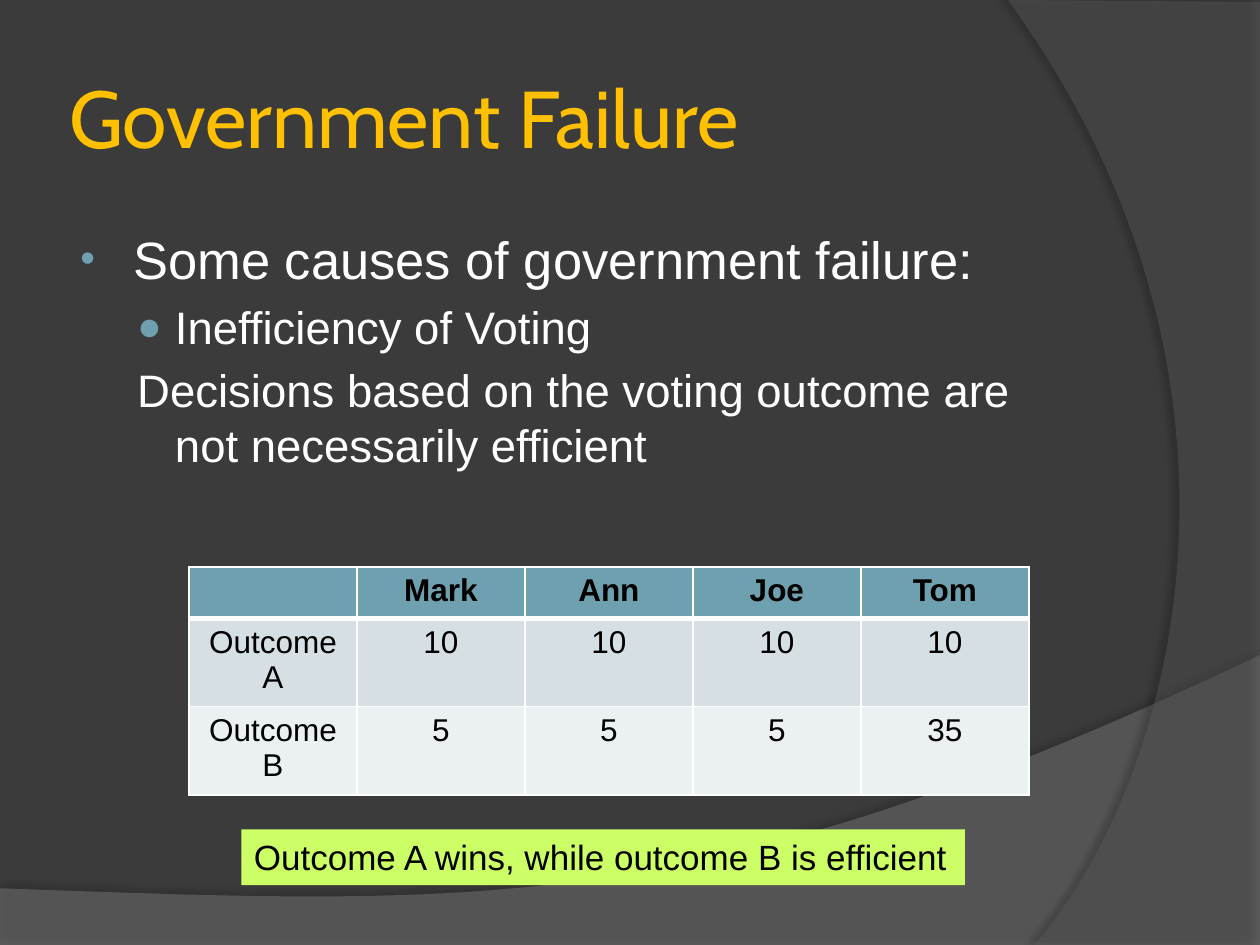
from dataclasses import dataclass

from lxml.etree import SubElement
from pptx import Presentation
from pptx.dml.color import RGBColor
from pptx.enum.shapes import MSO_SHAPE
from pptx.enum.text import MSO_ANCHOR, MSO_AUTO_SIZE, PP_ALIGN
from pptx.oxml.ns import qn
from pptx.util import Inches, Pt


@dataclass(frozen=True)
class Theme:
    """Colours, fonts and type sizes of the deck."""
    ground: str = "3B3B3B"
    wave: str = "7F7F7F"
    arc: str = "5E5E5E"
    shade: str = "000000"
    gold: str = "FFC000"
    light: str = "FFFFFF"
    dark: str = "000000"
    teal: str = "6EA0B0"
    bands: tuple = ("6EA0B0", "D5DFE4", "EBF0F2")
    lime: str = "CCFF66"
    heading_font: str = "Cabin"
    body_font: str = "Arial"
    title_size: int = 46
    lead_size: int = 30
    point_size: int = 26
    note_size: int = 20
    cell_size: int = 18


@dataclass(frozen=True)
class Box:
    """A region in grid units, twelve columns or rows to the inch."""
    left: float
    top: float
    width: float
    height: float

    def emu(self):
        """Return the region as slide lengths."""
        return [grid(n) for n in (self.left, self.top, self.width, self.height)]


THEME = Theme()
PAGE = Box(0, 0, 120, 90)


def grid(units):
    """Turn grid units into a slide length."""
    return Inches(units / 12)


def paint(fill, color):
    """Give a fill one solid colour."""
    fill.solid()
    fill.fore_color.rgb = RGBColor.from_string(color)


def add_node(parent, tag, **attributes):
    """Append a drawing element with the given attributes."""
    return SubElement(parent, qn(tag), {k: str(v) for k, v in attributes.items()})


def write(para, text, *, size, color, font=THEME.body_font, bold=False, align=PP_ALIGN.LEFT):
    """Put formatted text in a paragraph."""
    para.alignment = align
    span = para.add_run()
    span.text = text
    span.font.name = font
    span.font.size = Pt(size)
    span.font.bold = bold
    span.font.color.rgb = RGBColor.from_string(color)


def list_style(para, size, margin, indent, bullet=None, scale=100):
    """Set the hanging indent, spacing and bullet of a list paragraph."""
    para.space_before = Pt(size * 0.2)
    props = para._p.get_or_add_pPr()
    props.set("marL", str(Inches(margin)))
    props.set("indent", str(Inches(indent)))
    if bullet is None:
        add_node(props, "a:buNone")
        return
    add_node(add_node(props, "a:buClr"), "a:srgbClr", val=THEME.teal)
    add_node(props, "a:buSzPct", val=scale * 1000)
    add_node(props, "a:buFont", typeface=THEME.body_font)
    add_node(props, "a:buChar", char=bullet)


def bezier(start, first, second, end, steps=48):
    """Return points along a cubic curve, without its start."""
    points = []
    for step in range(1, steps + 1):
        t = step / steps
        weights = ((1 - t) ** 3, 3 * t * (1 - t) ** 2, 3 * t * t * (1 - t), t ** 3)
        points.append(tuple(
            sum(w * p[axis] for w, p in zip(weights, (start, first, second, end)))
            for axis in (0, 1)))
    return points


def add_sweep(page, box, corners, curve, color, opacity, shadow):
    """Draw a translucent outline with one curved side and a soft shadow."""
    points = [(grid(box.left + x), grid(box.top + y))
              for x, y in corners + bezier(corners[-1], *curve)]
    builder = page.shapes.build_freeform(*points[0])
    builder.add_line_segments(points[1:], close=True)
    shape = builder.convert_to_shape()
    paint(shape.fill, color)
    shape.line.fill.background()
    tone = shape._element.spPr.find(qn("a:solidFill"))[0]
    add_node(tone, "a:alpha", val=opacity * 1000)
    density, blur, distance, angle = shadow
    effects = add_node(shape._element.spPr, "a:effectLst")
    outer = add_node(effects, "a:outerShdw", blurRad=Pt(blur), dist=Pt(distance),
                     dir=angle * 60000, algn="ctr", rotWithShape=0)
    shade = add_node(outer, "a:srgbClr", val=THEME.shade)
    add_node(shade, "a:alpha", val=density * 1000)


def add_backdrop(page, box):
    """Colour the page and add its two sweeping bands."""
    paint(page.background.fill, THEME.ground)
    add_sweep(page, box, [(0, 84.6), (0, 90), (120, 90), (120, 62.4)],
              [(67.1, 87.5), (46.9, 86.3), (0, 84.6)],
              THEME.wave, 45, (35, 4, 3.5, 270))
    add_sweep(page, box, [(120, 0.2), (120, 90), (98.5, 90)],
              [(112.2, 74.3), (122.2, 36), (96, 0)],
              THEME.arc, 40, (45, 4, 4, 180))


def add_title(page, box, text):
    """Place the page heading."""
    frame = page.shapes.add_textbox(*box.emu()).text_frame
    frame.word_wrap = True
    frame.vertical_anchor = MSO_ANCHOR.MIDDLE
    frame.margin_left = frame.margin_right = Inches(0.05)
    write(frame.paragraphs[0], text, size=THEME.title_size,
          color=THEME.gold, font=THEME.heading_font)


def add_points(page, box, lead, point, detail):
    """Place the lead line, its bulleted point and the detail below."""
    frame = page.shapes.add_textbox(*box.emu()).text_frame
    frame.word_wrap = True
    lines = [(lead, THEME.lead_size, 0.46, -0.42, "•", 80),
             (point, THEME.point_size, 0.79, -0.3, "●", 90),
             (detail, THEME.point_size, 0.79, -0.3)]
    for index, (text, size, *style) in enumerate(lines):
        para = frame.add_paragraph() if index else frame.paragraphs[0]
        write(para, text, size=size, color=THEME.light)
        para.level = min(index, 1)
        list_style(para, size, *style)


def add_borders(cell, bottom):
    """Draw the light rules around a cell."""
    props = cell._tc.get_or_add_tcPr()
    widths = {"a:lnL": 1, "a:lnR": 1, "a:lnT": 1, "a:lnB": bottom}
    for index, (tag, width) in enumerate(widths.items()):
        rule = add_node(props, tag, w=Pt(width))
        add_node(add_node(rule, "a:solidFill"), "a:srgbClr", val=THEME.light)
        props.insert(index, rule)


def add_votes(page, box, rows, heights):
    """Place the table of each voter's gain from each outcome."""
    table = page.shapes.add_table(len(rows), len(rows[0]), *box.emu()).table
    for r, (values, height) in enumerate(zip(rows, heights)):
        table.rows[r].height = grid(height)
        for c, value in enumerate(values):
            cell = table.cell(r, c)
            paint(cell.fill, THEME.bands[r])
            add_borders(cell, bottom=1 if r else 3)
            if value:
                write(cell.text_frame.paragraphs[0], value, size=THEME.cell_size,
                      color=THEME.dark, bold=r == 0, align=PP_ALIGN.CENTER)


def add_verdict(page, box, text):
    """Place the highlighted conclusion."""
    shape = page.shapes.add_shape(MSO_SHAPE.RECTANGLE, *box.emu())
    shape.shadow.inherit = False
    paint(shape.fill, THEME.lime)
    shape.line.fill.background()
    frame = shape.text_frame
    frame.word_wrap = False
    frame.auto_size = MSO_AUTO_SIZE.SHAPE_TO_FIT_TEXT
    frame.vertical_anchor = MSO_ANCHOR.TOP
    write(frame.paragraphs[0], text, size=THEME.note_size, color=THEME.dark)


def main():
    """Build and save the deck."""
    deck = Presentation()
    deck.slide_width, deck.slide_height = grid(PAGE.width), grid(PAGE.height)
    page = deck.slides.add_slide(deck.slide_layouts[6])
    add_backdrop(page, PAGE)
    add_title(page, Box(6, 3.6, 98, 15), "Government Failure")
    add_points(page, Box(6, 21, 98, 59.4), "Some causes of government failure:",
               "Inefficiency of Voting",
               "Decisions based on the voting outcome are not necessarily efficient")
    add_votes(page, Box(18, 54, 80, 20.8),
              [("", "Mark", "Ann", "Joe", "Tom"),
               ("Outcome A", "10", "10", "10", "10"),
               ("Outcome B", "5", "5", "5", "35")], (4.9, 7.9, 7.9))
    add_verdict(page, Box(23, 79, 68.9, 5.3), "Outcome A wins, while outcome B is efficient")
    deck.save("out.pptx")


if __name__ == "__main__":
    main()
